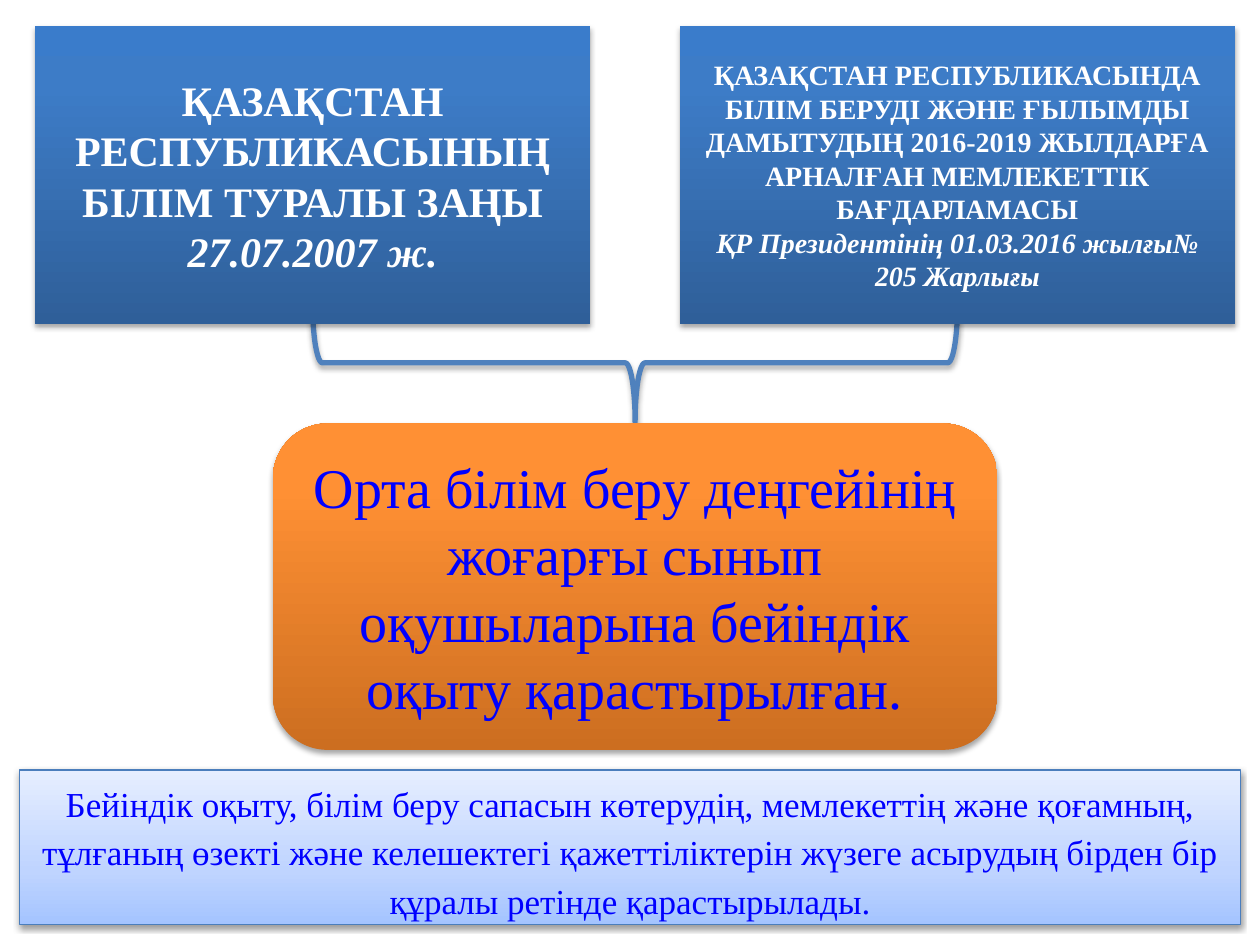
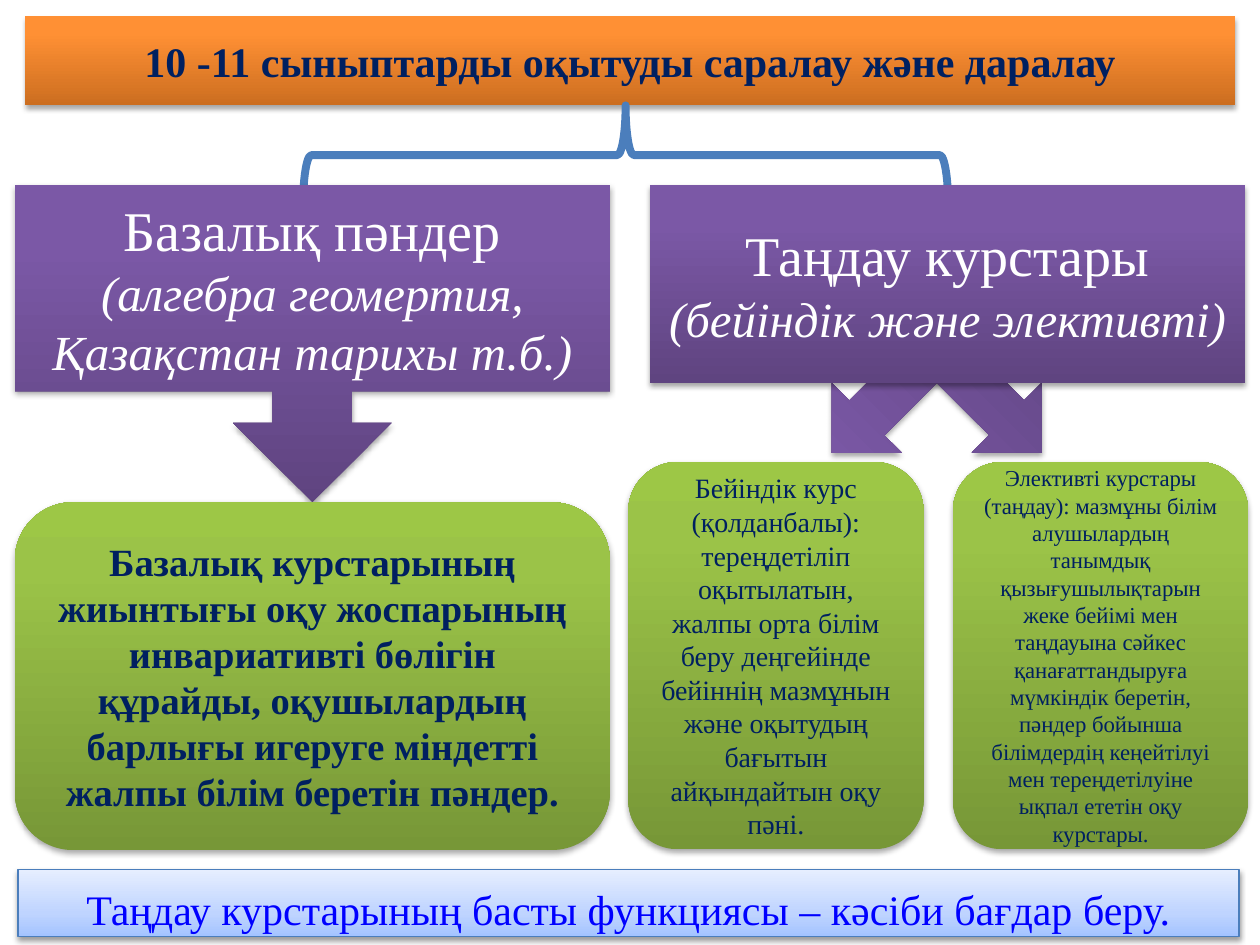
from copy import deepcopy

from lxml import etree
from pptx import Presentation
from pptx.dml.color import RGBColor
from pptx.enum import shapes, text
from pptx.oxml.ns import qn
from pptx.util import Pt

FONT = "Times New Roman"
WHITE = RGBColor(0xFF, 0xFF, 0xFF)
NAVY = RGBColor(0x00, 0x20, 0x60)
BRIGHT_BLUE = RGBColor(0x00, 0x00, 0xFF)
LINE_BLUE = RGBColor(0x4B, 0x7E, 0xBC)
BRACE_BLUE = RGBColor(0x4F, 0x81, 0xBD)


def gradient(middle, *colors):
    """Pair bottom-to-top colours with their positions."""
    return list(zip((0, middle, 1), map(RGBColor.from_string, colors)))


BLUE = gradient(0.8, "2F5F99", "3D7CC7", "3A7CCB")
ORANGE = gradient(0.8, "CC6E20", "FF9034", "FF9136")
PURPLE = gradient(0.8, "5F4480", "7B58A6", "7C57A8")
GREEN = gradient(0.8, "779737", "9BC348", "9DC746")
PALE_BLUE = gradient(0.35, "A4C4FF", "BFD4FF", "E6EEFF")

SHAPE = shapes.MSO_SHAPE
MIDDLE = text.MSO_ANCHOR.MIDDLE
TOP = text.MSO_ANCHOR.TOP


def fill_gradient(sp, stops):
    sp.fill.gradient()
    sp.fill.gradient_angle = 90
    gs_list = sp._element.spPr.find(".//" + qn("a:gsLst"))
    gs_list.append(deepcopy(gs_list[0]))
    for stop, (position, color) in zip(sp.fill.gradient_stops, stops):
        stop.position = position
        stop.color.rgb = color


def add_shadow(sp, distance=1.8, opacity=35):
    sp.shadow.inherit = False
    effects = sp._element.spPr.find(qn("a:effectLst"))
    shadow = etree.SubElement(effects, qn("a:outerShdw"), blurRad=str(Pt(3.15)),
                              dist=str(Pt(distance)), dir="5400000", rotWithShape="0")
    color = etree.SubElement(shadow, qn("a:srgbClr"), val="000000")
    etree.SubElement(color, qn("a:alpha"), val=str(opacity * 1000))


def write(sp, paragraphs, color, anchor=MIDDLE, line_spacing=None):
    """Fill a shape with centred (text, size, style) paragraphs; style holds b and/or i."""
    tf = sp.text_frame
    tf.word_wrap = True
    tf.auto_size = text.MSO_AUTO_SIZE.NONE
    tf.vertical_anchor = anchor
    tf.text = "\n".join(words for words, _, _ in paragraphs)
    for p, (_, size, style) in zip(tf.paragraphs, paragraphs):
        p.alignment = text.PP_ALIGN.CENTER
        p.line_spacing = line_spacing
        for r in p.runs:
            r.font.name = FONT
            r.font.size = Pt(size)
            r.font.bold = "b" in style
            r.font.italic = "i" in style
            r.font.color.rgb = color


def add_block(slide, kind, box, stops, paragraphs=(), color=WHITE):
    sp = slide.shapes.add_shape(kind, *map(Pt, box))
    fill_gradient(sp, stops)
    sp.line.fill.background()
    add_shadow(sp)
    if paragraphs:
        write(sp, paragraphs, color)
    return sp


def add_brace(slide, box, rotation, color, width):
    """Draw a brace lying on its side inside the given visible box."""
    x, y, w, h = box
    sp = slide.shapes.add_shape(SHAPE.RIGHT_BRACE, Pt(x + (w - h) / 2),
                                Pt(y + (h - w) / 2), Pt(h), Pt(w))
    sp.rotation = rotation
    sp.fill.background()
    sp.line.color.rgb = color
    sp.line.width = Pt(width)
    sp.shadow.inherit = False
    return sp


def add_conclusion(slide, box, words, size):
    sp = slide.shapes.add_shape(SHAPE.RECTANGLE, *map(Pt, box))
    fill_gradient(sp, PALE_BLUE)
    sp.line.color.rgb = LINE_BLUE
    sp.line.width = Pt(0.75)
    add_shadow(sp, distance=1.6, opacity=38)
    write(sp, [(words, size, "")], BRIGHT_BLUE, TOP, 1.15)


def add_title(slide, box, words):
    title = slide.shapes.title
    title.left, title.top, title.width, title.height = map(Pt, box)
    fill_gradient(title, ORANGE)
    add_shadow(title)
    write(title, [(words, 24, "b")], NAVY)


def build_legal_basis(prs):
    slide = prs.slides.add_slide(prs.slide_layouts[6])
    brace = add_brace(slide, (178.6, 173.5, 368.6, 67.7), 90, BRACE_BLUE, 3)
    add_shadow(brace)
    laws = [
        [("ҚАЗАҚСТАН РЕСПУБЛИКАСЫНЫҢ БІЛІМ ТУРАЛЫ ЗАҢЫ", 24, "b"),
         ("27.07.2007 ж.", 24, "bi")],
        [("ҚАЗАҚСТАН РЕСПУБЛИКАСЫНДА БІЛІМ БЕРУДІ ЖӘНЕ ҒЫЛЫМДЫ ДАМЫТУДЫҢ "
          "2016-2019 ЖЫЛДАРҒА АРНАЛҒАН МЕМЛЕКЕТТІК БАҒДАРЛАМАСЫ", 16, "b"),
         ("ҚР Президентінің 01.03.2016 жылғы№ 205 Жарлығы", 16, "bi")],
    ]
    for i, law in enumerate(laws):
        add_block(slide, SHAPE.RECTANGLE, (20 + 368.5 * i, 15, 317.25, 170), BLUE, law)
    add_block(slide, SHAPE.ROUNDED_RECTANGLE, (156, 242, 414, 186.5), ORANGE,
              [("Орта білім беру деңгейінің жоғарғы сынып оқушыларына бейіндік "
                "оқыту қарастырылған.", 32, "")], BRIGHT_BLUE)
    add_conclusion(slide, (11.25, 440, 697.75, 88.5),
                   "Бейіндік оқыту, білім беру сапасын көтерудің, мемлекеттің және қоғамның, "
                   "тұлғаның өзекті және келешектегі қажеттіліктерін жүзеге асырудың "
                   "бірден бір құралы ретінде қарастырылады.", 20)


def build_course_types(prs):
    slide = prs.slides.add_slide(prs.slide_layouts[5])
    split_arrow = add_block(slide, SHAPE.LEFT_UP_ARROW, (478.8, 182.2, 113, 113), PURPLE)
    split_arrow.rotation = 224.9
    add_brace(slide, (173.2, 60.2, 368.6, 56.8), 270, LINE_BLUE, 4.5)
    add_title(slide, (14.25, 9, 691.5, 51), "10 -11 сыныптарды оқытуды саралау және даралау")

    add_block(slide, SHAPE.DOWN_ARROW_CALLOUT, (8.5, 105.75, 340, 181.25), PURPLE,
              [("Базалық пәндер", 32, ""),
               ("(алгебра геомертия, Қазақстан тарихы т.б.)", 28, "i")])
    add_block(slide, SHAPE.RECTANGLE, (371.5, 105.75, 340, 113), PURPLE,
              [("Таңдау курстары", 32, ""), ("(бейіндік және элективті)", 28, "i")])

    add_block(slide, SHAPE.ROUNDED_RECTANGLE, (8.5, 287, 340, 198.75), GREEN,
              [("Базалық курстарының жиынтығы оқу жоспарының инвариативті бөлігін құрайды, "
                "оқушылардың барлығы игеруге міндетті жалпы білім беретін пәндер.",
                22, "b")], NAVY)
    electives = [
        ("Бейіндік курс (қолданбалы): тереңдетіліп оқытылатын, жалпы орта білім беру "
         "деңгейінде бейіннің мазмұнын және оқытудың бағытын айқындайтын оқу пәні.", 16, ""),
        ("Элективті курстары (таңдау): мазмұны білім алушылардың танымдық "
         "қызығушылықтарын жеке бейімі мен таңдауына сәйкес қанағаттандыруға мүмкіндік "
         "беретін, пәндер бойынша білімдердің кеңейтілуі мен тереңдетілуіне ықпал ететін "
         "оқу курстары.", 13, ""),
    ]
    for i, course in enumerate(electives):
        add_block(slide, SHAPE.ROUNDED_RECTANGLE, (359 + 185.5 * i, 264, 168.75, 221.25),
                  GREEN, [course], NAVY)
    add_conclusion(slide, (10.25, 497, 697.75, 38),
                   "Таңдау курстарының басты функциясы – кәсіби бағдар беру.", 24)


def main():
    prs = Presentation()
    prs.slide_width, prs.slide_height = Pt(720), Pt(540)
    build_legal_basis(prs)
    build_course_types(prs)
    prs.save("out.pptx")


if __name__ == "__main__":
    main()
